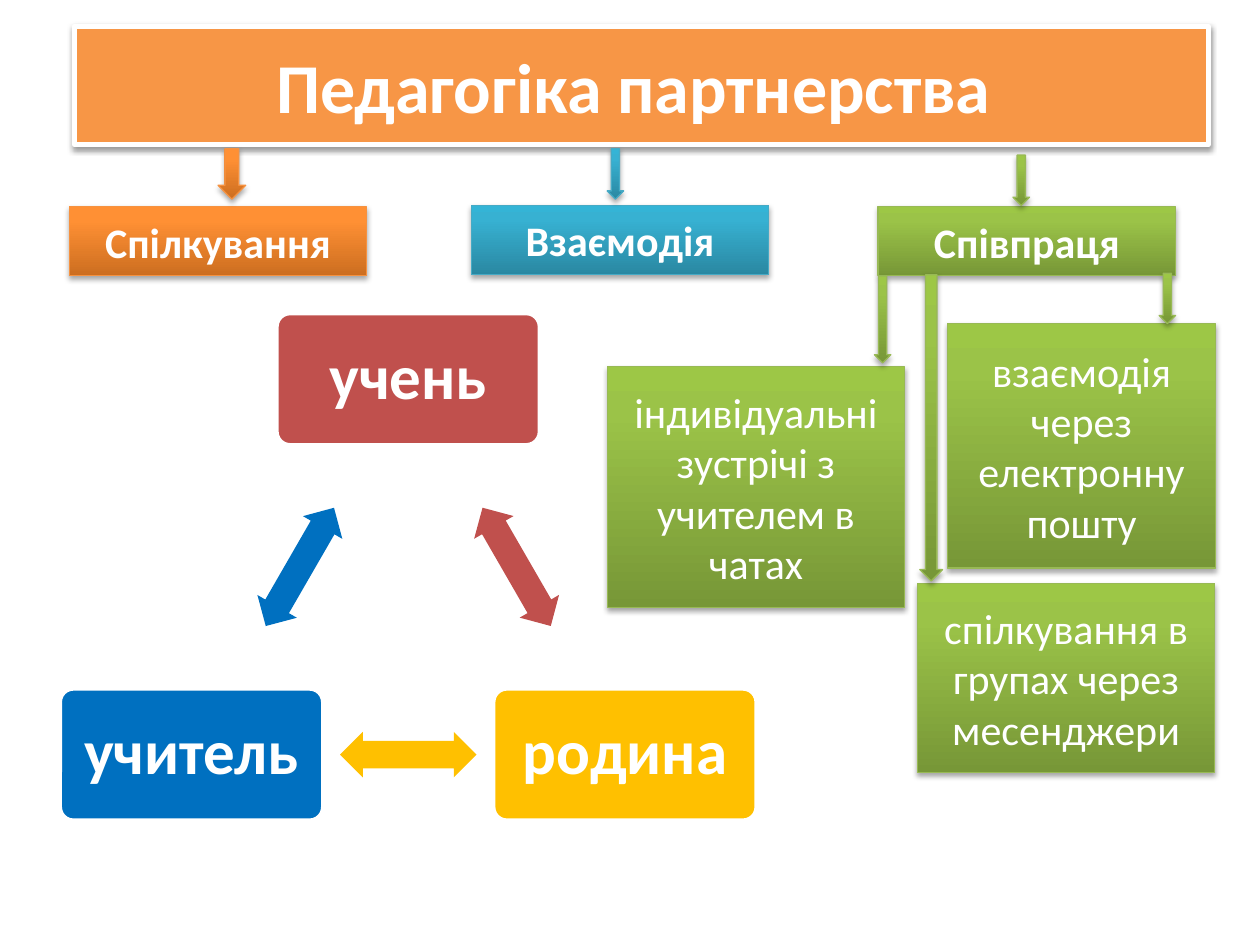
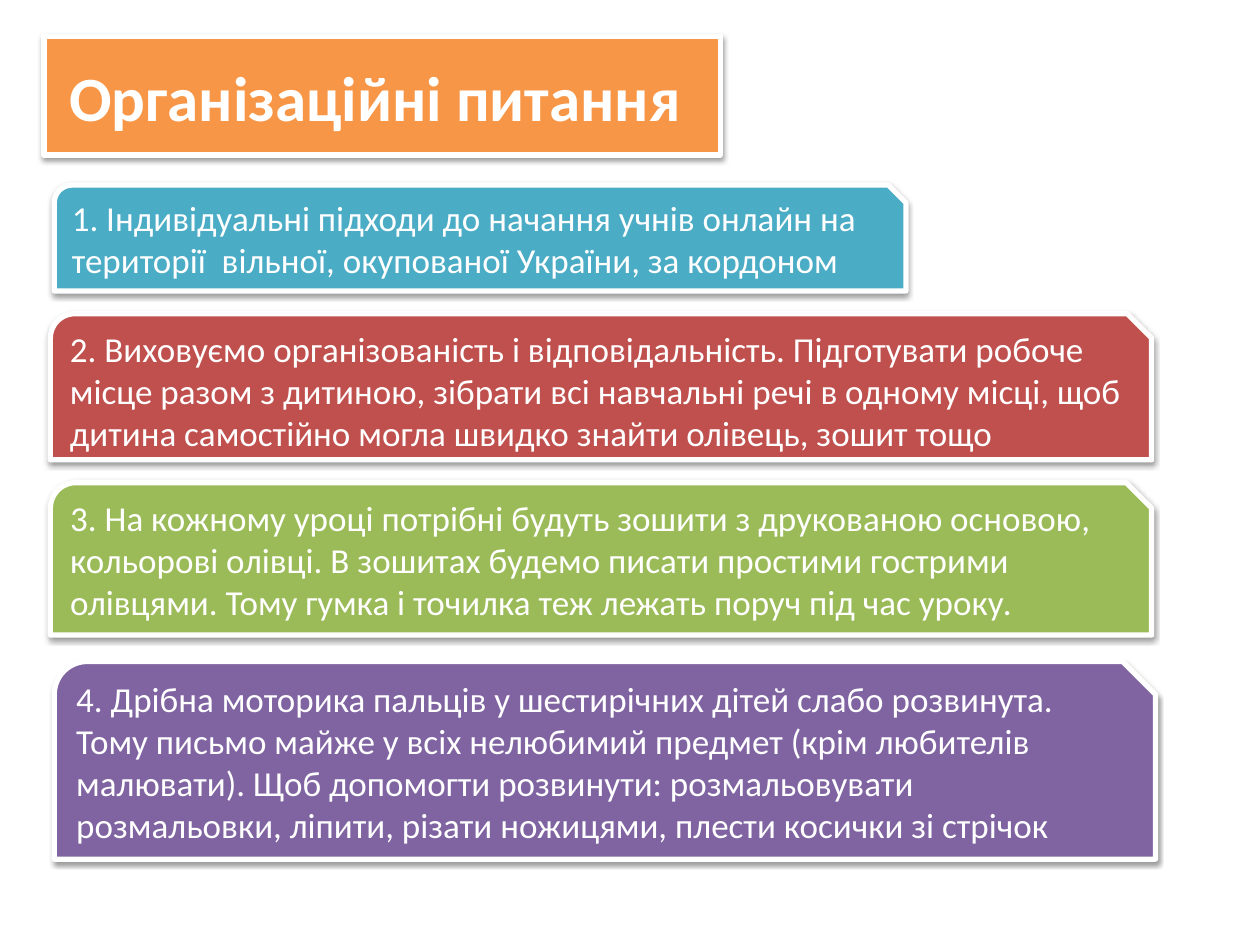
import copy
import math
from dataclasses import dataclass
from itertools import cycle, islice
from typing import NamedTuple

from lxml import etree
from pptx import Presentation
from pptx import util as u
from pptx.dml import color
from pptx.enum import shapes, text
from pptx.oxml import ns


class Frame(NamedTuple):
    left: float
    top: float
    width: float
    height: float


class Gradient(NamedTuple):
    bottom: str
    middle: str
    top: str
    outline: str


class Shade(NamedTuple):
    opacity: int
    distance: float


@dataclass(frozen=True)
class Theme:
    font: str = "Calibri"
    white: str = "FFFFFF"
    black: str = "000000"
    title: str = "F79646"
    teal: str = "4BACC6"
    red: str = "C0504D"
    green: str = "9BBB59"
    purple: str = "8064A2"
    yellow: str = "FFC000"
    blue: str = "0070C0"
    orange_gradient: Gradient = Gradient("CC6E20", "FF9034", "FF9136", "F69240")
    teal_gradient: Gradient = Gradient("2A88A2", "37B1D2", "34B4D6", "46AAC5")
    green_gradient: Gradient = Gradient("779737", "9BC348", "9DC746", "98B955")
    flat_shade: Shade = Shade(38, 1.6)
    gradient_shade: Shade = Shade(35, 1.8)
    shade_blur: float = 3.1
    title_size: int = 40
    section_size: int = 36
    node_size: int = 36
    branch_size: int = 24
    card_size: int = 20
    frame_line: float = 3
    node_line: float = 2
    thin_line: float = 0.75


THEME = Theme()


@dataclass(frozen=True)
class Branch:
    label: str
    frame: Frame
    gradient: Gradient = THEME.green_gradient
    bold: bool = False


@dataclass(frozen=True)
class DownArrow:
    frame: Frame
    gradient: Gradient = THEME.green_gradient


@dataclass(frozen=True)
class Node:
    label: str
    fill: str


@dataclass(frozen=True)
class Card:
    label: str
    frame: Frame
    fill: str


BRANCHES = [
    Branch("Спілкування", Frame(39.6, 118, 170, 39.6), THEME.orange_gradient, True),
    Branch("Взаємодія", Frame(269.3, 117.4, 170, 39.6), THEME.teal_gradient, True),
    Branch("Співпраця", Frame(501.8, 118, 170, 39.6), bold=True),
    Branch("індивідуальні зустрічі з учителем в чатах", Frame(347, 209.5, 170, 137.5)),
    Branch("спілкування в групах через месенджери", Frame(524.2, 333.4, 170, 108)),
    Branch("взаємодія через електронну пошту", Frame(541.4, 185, 153.4, 139.7)),
]

DOWN_ARROWS = [
    DownArrow(Frame(124.6, 85, 15.8, 28.8), THEME.orange_gradient),
    DownArrow(Frame(347, 85, 9.4, 28.8), THEME.teal_gradient),
    DownArrow(Frame(578.9, 88.6, 9.4, 28.8)),
    DownArrow(Frame(662.4, 156.2, 9.4, 28.8)),
    DownArrow(Frame(499.7, 157.7, 9.4, 49.7)),
    DownArrow(Frame(525.6, 157, 13, 175)),
]

NODES = [
    Node("учень", THEME.red),
    Node("родина", THEME.yellow),
    Node("учитель", THEME.blue),
]
CYCLE_CENTRE = (233.3, 359.7)
CYCLE_RADIUS = 143

CARDS = [
    Card(
        "1. Індивідуальні підходи до начання учнів онлайн на території  вільної, "
        "окупованої України, за кордоном",
        Frame(31, 105.8, 486.7, 60.5), THEME.teal,
    ),
    Card(
        "2. Виховуємо організованість і відповідальність. Підготувати робоче місце "
        "разом з дитиною, зібрати всі навчальні речі в одному місці, щоб дитина "
        "самостійно могла швидко знайти олівець, зошит тощо",
        Frame(28.8, 179.3, 629.3, 83.5), THEME.red,
    ),
    Card(
        "3. На кожному уроці потрібні будуть зошити з друкованою основою, кольорові "
        "олівці. В зошитах будемо писати простими гострими олівцями. Тому гумка і "
        "точилка теж лежать поруч під час уроку.",
        Frame(28.8, 275.8, 629.3, 87.1), THEME.green,
    ),
    Card(
        "4. Дрібна моторика пальців у шестирічних дітей слабо розвинута. Тому письмо "
        "майже у всіх нелюбимий предмет (крім любителів малювати). Щоб допомогти "
        "розвинути: розмальовувати розмальовки, ліпити, різати ножицями, плести "
        "косички зі стрічок",
        Frame(31, 378, 629.3, 113), THEME.purple,
    ),
]


def rgb(value: str) -> color.RGBColor:
    return color.RGBColor.from_string(value)


def centred(x: float, y: float, width: float, height: float) -> Frame:
    return Frame(x - width / 2, y - height / 2, width, height)


def fill_gradient(box, gradient: Gradient) -> None:
    box.fill.gradient()
    box.fill.gradient_angle = 90
    stop_list = box.element.spPr.find(".//" + ns.qn("a:gsLst"))
    stop_list.insert(1, copy.deepcopy(stop_list[0]))
    colours = (gradient.bottom, gradient.middle, gradient.top)
    for stop, position, colour in zip(box.fill.gradient_stops, (0, 0.8, 1), colours):
        stop.position = position
        stop.color.rgb = rgb(colour)


def add_shade(box, shade: Shade) -> None:
    effects = box.element.spPr.find(ns.qn("a:effectLst"))
    outer = etree.SubElement(
        effects, ns.qn("a:outerShdw"),
        blurRad=str(u.Pt(THEME.shade_blur)), dist=str(u.Pt(shade.distance)),
        dir="5400000", rotWithShape="0",
    )
    tone = etree.SubElement(outer, ns.qn("a:srgbClr"), val=THEME.black)
    etree.SubElement(tone, ns.qn("a:alpha"), val=str(shade.opacity * 1000))


def add_box(page, kind, frame: Frame, fill: str | Gradient, *, outline: str | None = None,
            weight: float = 0, shade: Shade | None = None):
    box = page.shapes.add_shape(kind, *(u.Pt(length) for length in frame))
    if isinstance(fill, Gradient):
        fill_gradient(box, fill)
    else:
        box.fill.solid()
        box.fill.fore_color.rgb = rgb(fill)
    if outline:
        box.line.color.rgb = rgb(outline)
        box.line.width = u.Pt(weight)
    else:
        box.line.fill.background()
    box.shadow.inherit = False
    if shade:
        add_shade(box, shade)
    return box


def write(box, content: str, *, size: float, bold: bool = False,
          align=text.PP_ALIGN.CENTER, anchor=text.MSO_ANCHOR.MIDDLE,
          inset: float | None = None, spacing: float | None = None,
          grow: bool = False) -> None:
    frame = box.text_frame
    frame.word_wrap = True
    frame.vertical_anchor = anchor
    if grow:
        frame.auto_size = text.MSO_AUTO_SIZE.SHAPE_TO_FIT_TEXT
    if inset is not None:
        frame.margin_left = frame.margin_right = u.Pt(inset)
        frame.margin_top = frame.margin_bottom = u.Pt(inset)
    para = frame.paragraphs[0]
    para.alignment = align
    para.line_spacing = spacing
    span = para.add_run()
    span.text = content
    span.font.name = THEME.font
    span.font.size = u.Pt(size)
    span.font.bold = bold
    span.font.color.rgb = rgb(THEME.white)


def add_framed(page, kind, frame: Frame, fill: str):
    return add_box(page, kind, frame, fill, outline=THEME.white,
                   weight=THEME.frame_line, shade=THEME.flat_shade)


def add_glossy(page, kind, frame: Frame, gradient: Gradient):
    return add_box(page, kind, frame, gradient, outline=gradient.outline,
                   weight=THEME.thin_line, shade=THEME.gradient_shade)


def add_title(page, content: str, frame: Frame, size: float) -> None:
    box = add_framed(page, shapes.MSO_SHAPE.RECTANGLE, frame, THEME.title)
    write(box, content, size=size, bold=True)


def add_cycle(page) -> None:
    centre_x, centre_y = CYCLE_CENTRE
    angles = [math.radians(120 * index - 90) for index in range(len(NODES))]
    points = [(centre_x + CYCLE_RADIUS * math.cos(angle),
               centre_y + CYCLE_RADIUS * math.sin(angle)) for angle in angles]
    following = islice(cycle(points), 1, None)
    for node, (x, y), (next_x, next_y) in zip(NODES, points, following):
        box = add_box(page, shapes.MSO_SHAPE.ROUNDED_RECTANGLE, centred(x, y, 150, 75),
                      node.fill, outline=THEME.white, weight=THEME.node_line)
        box.adjustments[0] = 0.1
        write(box, node.label, size=THEME.node_size, bold=True, inset=10.8, spacing=0.9)
        middle = centred((x + next_x) / 2, (y + next_y) / 2, 78, 26)
        arrow = add_box(page, shapes.MSO_SHAPE.LEFT_RIGHT_ARROW, middle, node.fill)
        arrow.adjustments[0] = 0.6
        arrow.adjustments[1] = 0.5
        arrow.rotation = round(math.degrees(math.atan2(next_y - y, next_x - x))) % 360


def build_partnership(page) -> None:
    add_cycle(page)
    add_title(page, "Педагогіка партнерства ", Frame(42.5, 15, 648, 67.7), THEME.title_size)
    for branch in BRANCHES:
        box = add_glossy(page, shapes.MSO_SHAPE.RECTANGLE, branch.frame, branch.gradient)
        write(box, branch.label, size=THEME.branch_size, bold=branch.bold)
    for arrow in DOWN_ARROWS:
        add_glossy(page, shapes.MSO_SHAPE.DOWN_ARROW, arrow.frame, arrow.gradient)


def build_organisation(page) -> None:
    add_title(page, "Організаційні питання ", Frame(25.2, 21, 386.6, 67.7), THEME.section_size)
    for card in CARDS:
        box = add_framed(page, shapes.MSO_SHAPE.SNIP_ROUND_RECTANGLE, card.frame, card.fill)
        write(box, card.label, size=THEME.card_size, align=text.PP_ALIGN.LEFT,
              anchor=text.MSO_ANCHOR.TOP, grow=True)


def main() -> None:
    deck = Presentation()
    deck.slide_width = u.Pt(720)
    deck.slide_height = u.Pt(540)
    for build in (build_partnership, build_organisation):
        build(deck.slides.add_slide(deck.slide_layouts[6]))
    deck.save("out.pptx")


if __name__ == "__main__":
    main()
